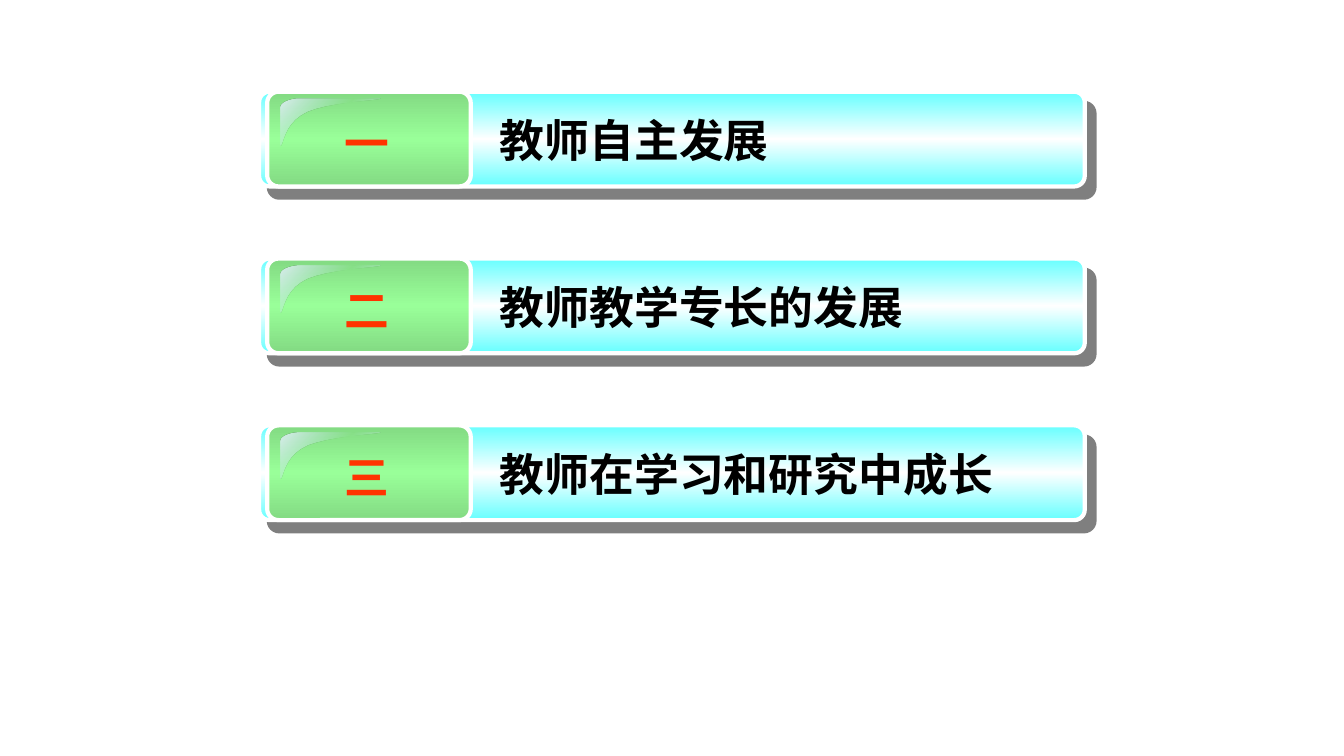
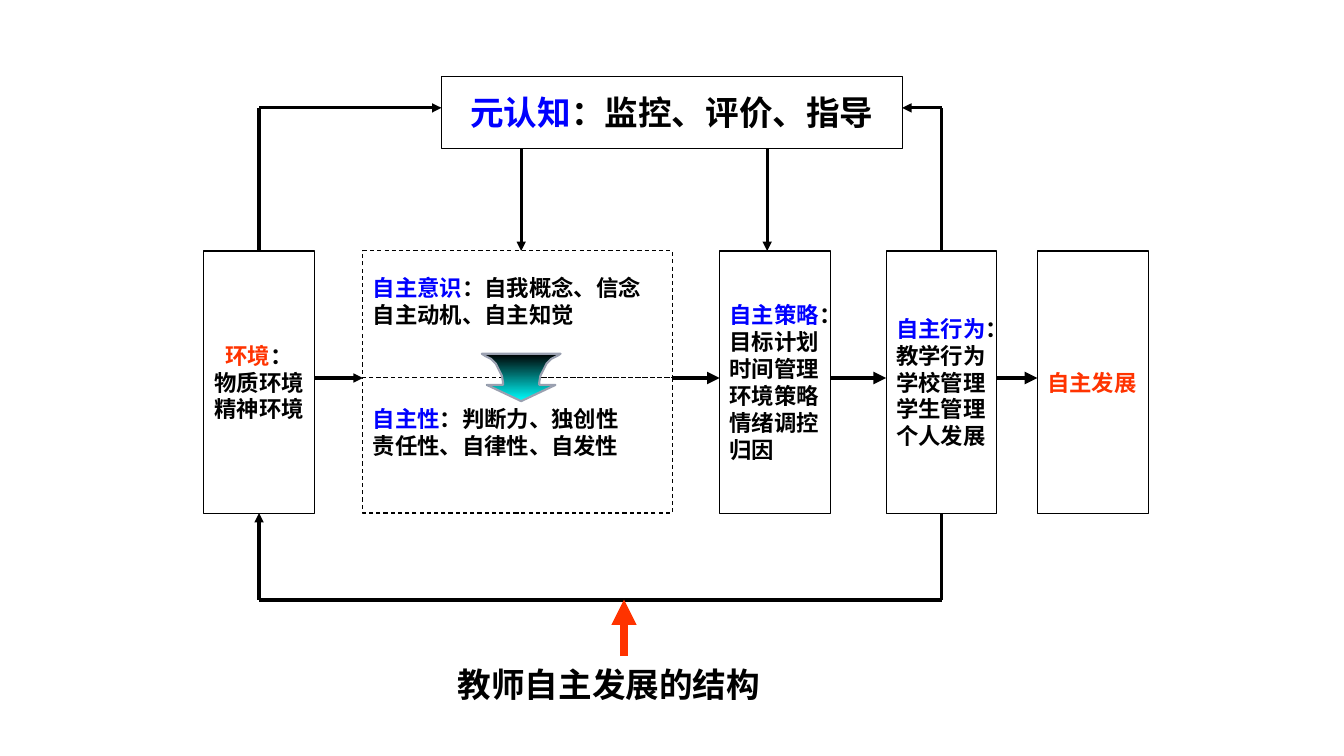
from pptx import Presentation
from pptx.dml.color import RGBColor
from pptx.enum.dml import MSO_LINE
from pptx.enum.shapes import MSO_CONNECTOR, MSO_SHAPE
from pptx.enum.text import MSO_ANCHOR, PP_ALIGN
from pptx.oxml.ns import qn
from pptx.util import Inches, Pt
from lxml.etree import SubElement

BLACK, WHITE, BLUE, RED = "000000", "FFFFFF", "0000FF", "FF3300"
LEFT, CENTER = PP_ALIGN.LEFT, PP_ALIGN.CENTER

deck = Presentation()
deck.slide_width, deck.slide_height = Inches(13.33), Inches(7.5)
COL, ROW = deck.slide_width / 100, deck.slide_height / 100


def grid(*lengths):
    return [int(n * (ROW if i % 2 else COL)) for i, n in enumerate(lengths)]


def write(shape, paragraphs, size, align=LEFT, font="Arial", wrap=False, anchor=MSO_ANCHOR.MIDDLE):
    frame = shape.text_frame
    frame.word_wrap = wrap
    frame.vertical_anchor = anchor
    for i, pieces in enumerate(paragraphs):
        paragraph = frame.paragraphs[0] if i == 0 else frame.add_paragraph()
        paragraph.alignment = align
        for words, color in pieces:
            run = paragraph.add_run()
            run.text = words
            run.font.name = font
            run.font.size = Pt(size)
            run.font.bold = True
            run.font.color.rgb = RGBColor.from_string(color)


agenda, structure = [deck.slides.add_slide(deck.slide_layouts[6]).shapes for _ in range(2)]
gradients = []

BAR_TOP, BAR_HEIGHT, BAR_STEP = 12.13, 12.53, 22.07
TOPICS = [("一", "教师自主发展"), ("二", "教师教学专长的发展"), ("三", "教师在学习和研究中成长")]
CYAN_BAND = [(0, "66FFFF", 100), (50, WHITE, 100), (100, "66FFFF", 100)]
GREEN_BAND = [(0, "83DA83", 100), (50, "99FF99", 100), (100, "83DA83", 100)]
GLOSS = [(0, "DDEFF0", 100), (50, "BBE0E3", 0), (100, "DDEFF0", 100)]
GLOSS_CURVES = [
    [(22.35, 0.93), (21.53, 0.93), (20.85, 1.47), (20.85, 2.13)],
    [(20.85, 7.07), (21.15, 7.2), (21, 4.13), (22.88, 2.67)],
    [(22.88, 2.67), (24.75, 1.33), (28.43, 1.2), (28.28, 0.93)],
]
BEZIER_STEPS = 10

for index, (number, topic) in enumerate(TOPICS):
    top = BAR_TOP + index * BAR_STEP
    for left, width, corner, stops in [(19.28, 61.43, 0.11, CYAN_BAND), (19.88, 15.15, 0.12, GREEN_BAND)]:
        bar = agenda.add_shape(MSO_SHAPE.ROUNDED_RECTANGLE, *grid(left, top, width, BAR_HEIGHT))
        bar.adjustments[0] = corner
        bar.line.color.rgb = RGBColor.from_string(WHITE)
        bar.line.width = Pt(3)
        bar.shadow.inherit = False
        gradients.append((bar, stops, 270))
        if stops is CYAN_BAND:
            effects = bar.element.spPr.find(qn("a:effectLst"))
            shadow = SubElement(effects, qn("a:outerShdw"), dist=str(Pt(10.6)), dir=str(49 * 60000),
                                algn="ctr", rotWithShape="0")
            tint = SubElement(shadow, qn("a:srgbClr"), val=BLACK)
            SubElement(tint, qn("a:alpha"), val="50000")

    outline = []
    for curve in GLOSS_CURVES:
        for step in range(BEZIER_STEPS + 1):
            t = step / BEZIER_STEPS
            weights = [(1 - t) ** 3, 3 * t * (1 - t) ** 2, 3 * t * t * (1 - t), t ** 3]
            x = sum(w * p[0] for w, p in zip(weights, curve))
            y = sum(w * p[1] for w, p in zip(weights, curve))
            outline.append(grid(x, top + y))
    builder = agenda.build_freeform(*outline[0], scale=1.0)
    builder.add_line_segments(outline[1:], close=True)
    gloss = builder.convert_to_shape()
    gloss.line.fill.background()
    gloss.shadow.inherit = False
    gradients.append((gloss, GLOSS, 315))

    numeral = agenda.add_textbox(*grid(21.38, top + 2.53, 11.85, 8.53))
    write(numeral, [[(number, RED)]], 32, CENTER, wrap=True, anchor=MSO_ANCHOR.TOP)
    heading = agenda.add_textbox(*grid(36.45, top + 2.13, 43.13, 8.53))
    write(heading, [[(topic, BLACK)]], 32, font="Noto Sans CJK SC", wrap=True, anchor=MSO_ANCHOR.TOP)

TOP, MIDDLE, BOTTOM = 33.2, 50, 67.87
META_LEFT, META_TOP, META_WIDTH, META_HEIGHT = 32.85, 10.13, 34.28, 9.47
META_RIGHT, META_BOTTOM = META_LEFT + META_WIDTH, META_TOP + META_HEIGHT
NARROW, WIDE = 8.25, 23.03
ENVIRONMENT, AWARENESS, STRATEGY, BEHAVIOUR, GROWTH = 15.15, 27, 53.55, 65.93, 77.18
FULL = BOTTOM - TOP

FACTORS = [
    (META_LEFT, META_TOP, META_WIDTH, META_HEIGHT, "元认知", "：监控、评价、指导", [], BLUE, 24, CENTER),
    (ENVIRONMENT, TOP, NARROW, FULL, "环境", "：", ["物质环境", "精神环境"], RED, 16, CENTER),
    (AWARENESS, TOP, WIDE, MIDDLE - TOP, "自主意识", "：自我概念、信念", ["自主动机、自主知觉"], BLUE, 16, LEFT),
    (AWARENESS, MIDDLE, WIDE, BOTTOM - MIDDLE, "自主性", "：判断力、独创性",
     ["责任性、自律性、自发性"], BLUE, 16, LEFT),
    (STRATEGY, TOP, NARROW, FULL, "自主策略", "：",
     ["目标计划", "时间管理", "环境策略", "情绪调控", "归因"], BLUE, 16, LEFT),
    (BEHAVIOUR, TOP, NARROW, FULL, "自主行为", "：",
     ["教学行为", "学校管理", "学生管理", "个人发展"], BLUE, 16, LEFT),
    (GROWTH, TOP, NARROW, FULL, "自主发展", "", [], RED, 16, LEFT),
]
for left, top, width, height, term, rest, details, color, size, align in FACTORS:
    factor = structure.add_shape(MSO_SHAPE.RECTANGLE, *grid(left, top, width, height))
    factor.fill.background()
    factor.line.color.rgb = RGBColor.from_string(BLACK)
    factor.line.width = Pt(0.75)
    factor.shadow.inherit = False
    if left == AWARENESS:
        factor.line.dash_style = MSO_LINE.DASH
        factor.text_frame.margin_bottom = Inches(0.32)
    opening = [(term, color)] + ([(rest, BLACK)] if rest else [])
    write(factor, [opening] + [[(detail, BLACK)] for detail in details], size, align)

caption = structure.add_textbox(*grid(25.2, 85.73, 40.2, 9.47))
write(caption, [[("教师自主发展的结构", BLACK)]], 24, CENTER)

ENV_AXIS, ACT_AXIS = ENVIRONMENT + NARROW / 2, BEHAVIOUR + NARROW / 2
UPPER, LOWER = 14.27, 79.33
FLOWS = [
    (ENV_AXIS, UPPER, META_LEFT, UPPER, 2.25, True, BLACK),
    (ENV_AXIS, UPPER, ENV_AXIS, TOP, 2.25, False, BLACK),
    (38.78, META_BOTTOM, 38.78, TOP, 2.25, True, BLACK),
    (57.08, META_BOTTOM, 57.08, TOP, 2.25, True, BLACK),
    (ACT_AXIS, UPPER, META_RIGHT, UPPER, 2.25, True, BLACK),
    (ACT_AXIS, TOP, ACT_AXIS, UPPER, 2.25, False, BLACK),
    (ACT_AXIS, BOTTOM, ACT_AXIS, LOWER, 2.25, False, BLACK),
    (ACT_AXIS, LOWER, ENV_AXIS, LOWER, 3, False, BLACK),
    (ENV_AXIS, LOWER, ENV_AXIS, BOTTOM, 2.25, True, BLACK),
    (ENVIRONMENT + NARROW, MIDDLE, AWARENESS, MIDDLE, 2.25, True, BLACK),
    (AWARENESS + WIDE, MIDDLE, STRATEGY, MIDDLE, 3, True, BLACK),
    (STRATEGY + NARROW, MIDDLE, BEHAVIOUR, MIDDLE, 3, True, BLACK),
    (BEHAVIOUR + NARROW, MIDDLE, GROWTH, MIDDLE, 3, True, BLACK),
    (46.43, 86.8, 46.43, LOWER, 6, True, RED),
]
for *ends, weight, pointed, color in FLOWS:
    flow = structure.add_connector(MSO_CONNECTOR.STRAIGHT, *grid(*ends))
    flow.line.color.rgb = RGBColor.from_string(color)
    flow.line.width = Pt(weight)
    if pointed:
        SubElement(flow.element.spPr.find(qn("a:ln")), qn("a:tailEnd"), type="triangle")
    SubElement(flow.element.spPr, qn("a:effectLst"))

FUNNEL_AXIS = 38.78
FUNNEL_SIDE = [(2.93, 46.8), (2.7, 47.07), (2.25, 47.47), (1.88, 48.13), (1.73, 48.67), (1.58, 49.2),
               (1.43, 49.73), (1.35, 50.53), (1.35, 50.93), (2.55, 50.93), (0, 53.07)]
outline = [grid(FUNNEL_AXIS + x, y) for x, y in FUNNEL_SIDE]
outline += [grid(FUNNEL_AXIS - x, y) for x, y in reversed(FUNNEL_SIDE[:-1])]
builder = structure.build_freeform(*outline[0], scale=1.0)
builder.add_line_segments(outline[1:], close=True)
funnel = builder.convert_to_shape()
funnel.line.color.rgb = RGBColor.from_string("9AA0B0")
funnel.line.width = Pt(1.5)
funnel.shadow.inherit = False
gradients.append((funnel, [(0, BLACK, 100), (100, "00FFFF", 100)], 270))

for shape, stops, angle in gradients:
    shape.fill.gradient()
    shape.fill.gradient_angle = angle
    stop_list = shape.element.spPr.find(qn("a:gradFill")).find(qn("a:gsLst"))
    for old_stop in list(stop_list):
        stop_list.remove(old_stop)
    for position, color, opacity in stops:
        stop = SubElement(stop_list, qn("a:gs"), pos=str(position * 1000))
        tint = SubElement(stop, qn("a:srgbClr"), val=color)
        if opacity < 100:
            SubElement(tint, qn("a:alpha"), val=str(opacity * 1000))

deck.save("out.pptx")
